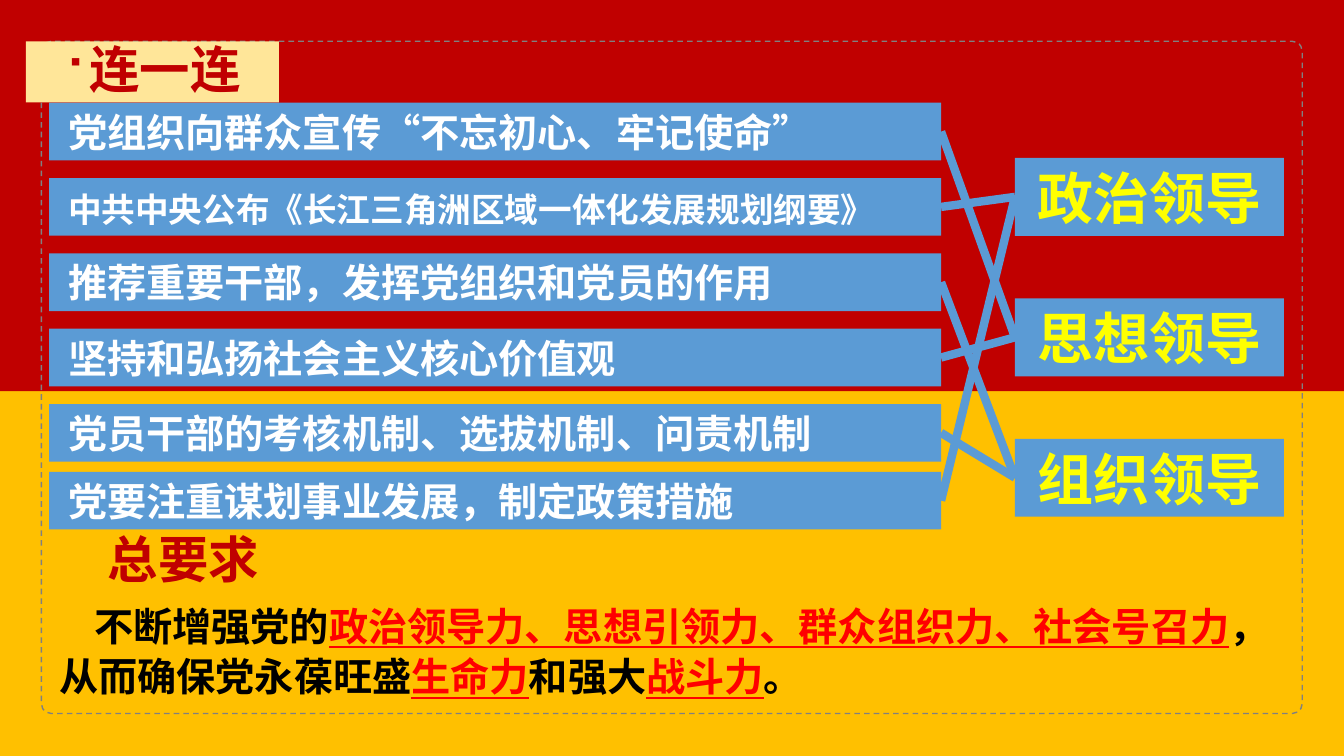
from pptx import Presentation
from pptx.dml.color import RGBColor
from pptx.enum.dml import MSO_LINE
from pptx.enum.shapes import MSO_CONNECTOR, MSO_SHAPE
from pptx.enum.text import MSO_ANCHOR, PP_ALIGN
from pptx.oxml.ns import qn
from pptx.util import Pt
from lxml.etree import SubElement

TITLE = "连一连"
CASES = [
    "党组织向群众宣传“不忘初心、牢记使命”",
    "中共中央公布《长江三角洲区域一体化发展规划纲要》",
    "推荐重要干部，发挥党组织和党员的作用",
    "坚持和弘扬社会主义核心价值观",
    "党员干部的考核机制、选拔机制、问责机制",
    "党要注重谋划事业发展，制定政策措施",
]
ROLES = ["政治领导", "思想领导", "组织领导"]
MATCHES = [(0, 1), (1, 0), (2, 2), (3, 1), (4, 2), (5, 0)]
HEADING = "总要求"
GOAL = [
    ("不断增强党的", False),
    ("政治领导力、思想引领力、群众组织力、社会号召力", True),
    ("，从而确保党永葆旺盛", False),
    ("生命力", True),
    ("和强大", False),
    ("战斗力", True),
    ("。", False),
]

THEME = {
    "font": "Noto Sans CJK SC",
    "red": "C00000", "gold": "FFC000", "blue": "5B9BD5", "cream": "FFE699",
    "gray": "808080", "white": "FFFFFF", "yellow": "FFFF00",
    "black": "000000", "key": "FF0000",
    "small": 24, "body": 28, "head": 36, "role": 40,
}
WIDE, HIGH = 960, 540


def color(name):
    return RGBColor.from_string(THEME[name])


def style(run, size, tone):
    font = run.font
    font.name = THEME["font"]
    font.size = Pt(THEME[size])
    font.bold = True
    font.color.rgb = color(tone)
    props = run._r.get_or_add_rPr()
    SubElement(props, qn("a:ea")).set("typeface", THEME["font"])


def box(slide, rect, fill, kind=MSO_SHAPE.RECTANGLE):
    shape = slide.shapes.add_shape(kind, *map(Pt, rect))
    shape.shadow.inherit = False
    if fill:
        shape.fill.solid()
        shape.fill.fore_color.rgb = color(fill)
    else:
        shape.fill.background()
    shape.line.fill.background()
    return shape


def label(shape, text, size, tone, align, left=7.2, top=0):
    frame = shape.text_frame
    frame.word_wrap = True
    frame.vertical_anchor = MSO_ANCHOR.MIDDLE
    frame.margin_left, frame.margin_top = Pt(left), Pt(top)
    frame.margin_bottom = 0
    frame.text = text
    para = frame.paragraphs[0]
    para.alignment = align
    style(para.runs[0], size, tone)
    return para


def link(slide, case, role):
    line = slide.shapes.add_connector(MSO_CONNECTOR.STRAIGHT, 0, 0, 0, 0)
    line.begin_connect(case, 3)
    line.end_connect(role, 1)
    line.line.color.rgb = color("blue")
    line.line.width = Pt(6)
    SubElement(line._element.spPr, qn("a:effectLst"))


def backdrop(slide):
    box(slide, (0, 236, WIDE, HIGH - 236), "gold")
    box(slide, (0, 0, WIDE, 279.4), "red")
    edge = box(slide, (29.5, 29.5, 900.7, 480.2), None, MSO_SHAPE.ROUNDED_RECTANGLE)
    edge.adjustments[0] = 0.015
    edge.line.color.rgb = color("gray")
    edge.line.width = Pt(1)
    edge.line.dash_style = MSO_LINE.DASH


def match(slide):
    cases, roles = [], []
    for i, text in enumerate(CASES):
        top = 73.4 + 53.8 * i if i < len(CASES) - 1 else 337
        size, drop = ("small", 3.4) if len(text) > 22 else ("body", 0)
        case = box(slide, (35.2, top, 637, 41.2), "blue")
        label(case, text, size, "white", PP_ALIGN.LEFT, 13.4, drop)
        cases.append(case)
    for i, text in enumerate(ROLES):
        role = box(slide, (725, 112.8 + 100.3 * i, 192.2, 55.7), "blue")
        label(role, text, "role", "yellow", PP_ALIGN.CENTER)
        roles.append(role)
    for i, j in MATCHES:
        link(slide, cases[i], roles[j])


def title(slide):
    tab = box(slide, (18.5, 29.6, 180.8, 43.5), "cream")
    para = label(tab, TITLE, "head", "red", PP_ALIGN.CENTER)
    para.line_spacing = 0.9
    props = para._p.get_or_add_pPr()
    props.set("marL", str(Pt(18)))
    props.set("indent", str(Pt(-18)))
    SubElement(props, qn("a:buFont")).set("typeface", "Wingdings")
    SubElement(props, qn("a:buChar")).set("char", "■")


def goal(slide):
    frame = slide.shapes.add_textbox(Pt(35.2), Pt(417.6), Pt(898.6), Pt(95)).text_frame
    frame.word_wrap = True
    frame.margin_top = Pt(9.6)
    para = frame.paragraphs[0]
    para.line_spacing = 1.08
    para._p.get_or_add_pPr().set("indent", str(Pt(25)))
    for text, key in GOAL:
        run = para.add_run()
        run.text = text
        style(run, "body", "key" if key else "black")
        run.font.underline = key
    frame = slide.shapes.add_textbox(Pt(70), Pt(378.7), Pt(122.4), Pt(54)).text_frame
    frame.text = HEADING
    para = frame.paragraphs[0]
    para.line_spacing = 0.9
    style(para.runs[0], "head", "red")


def main():
    deck = Presentation()
    deck.slide_width, deck.slide_height = Pt(WIDE), Pt(HIGH)
    slide = deck.slides.add_slide(deck.slide_layouts[6])
    backdrop(slide)
    match(slide)
    title(slide)
    goal(slide)
    deck.save("out.pptx")


if __name__ == "__main__":
    main()
